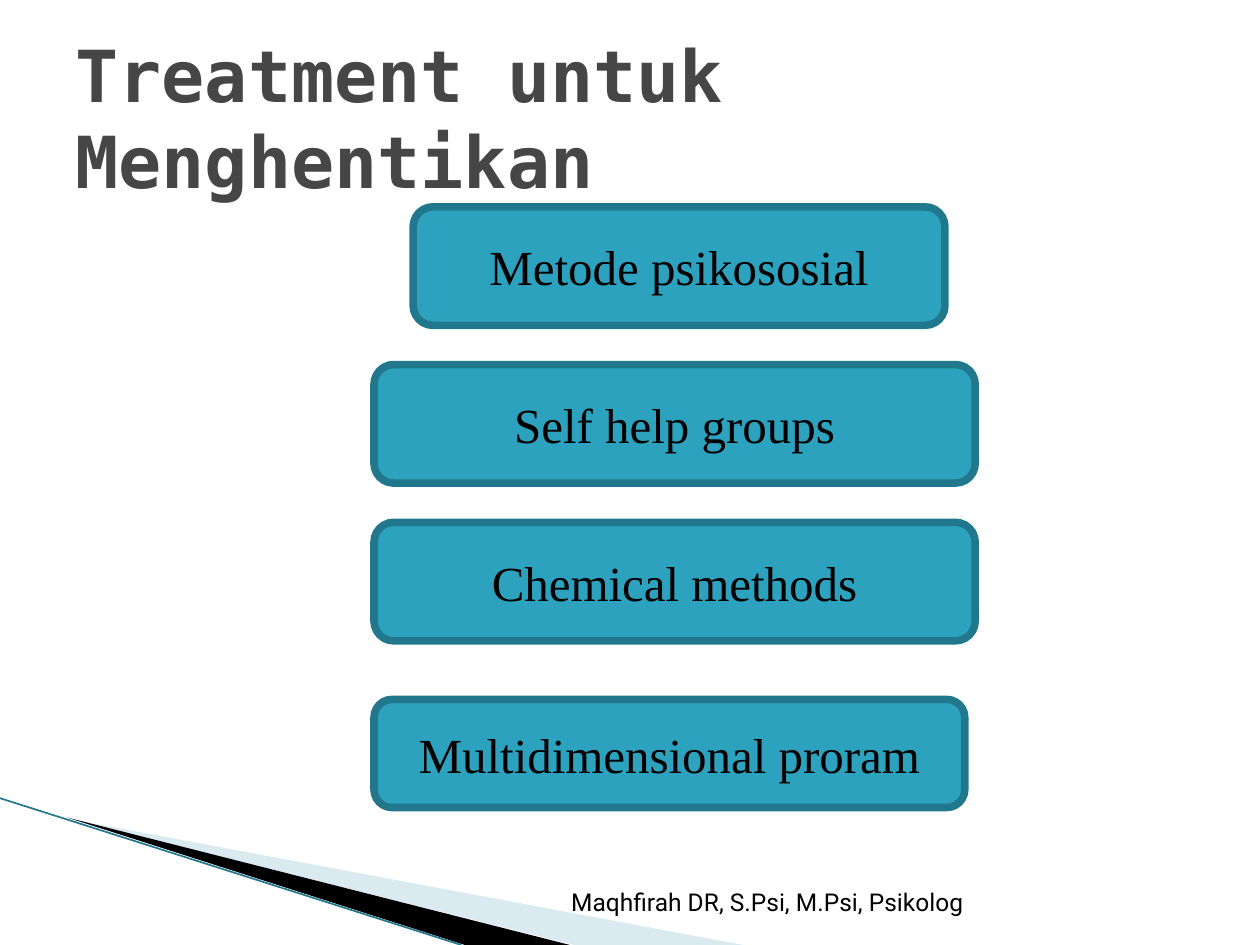
from dataclasses import dataclass

from lxml import etree
from pptx import Presentation
from pptx.dml.color import RGBColor
from pptx.enum import shapes, text
from pptx.oxml import ns
from pptx.util import Cm, Pt


@dataclass(frozen=True)
class Theme:
    title: str = "464646"
    ink: str = "000000"
    card: str = "2DA2BF"
    edge: str = "21788D"
    pale: str = "A0CBDC"
    title_font: str = "DejaVu Sans Mono"
    card_font: str = "Times New Roman"
    footer_font: str = "Roboto"
    title_size: float = 41
    card_size: float = 28
    footer_size: float = 14
    edge_width: float = 4.33
    rule_width: float = 0.95


THEME = Theme()


def rgb(value):
    return RGBColor.from_string(value)


def write(sp, content, font, size, color, bold=False,
          align=text.PP_ALIGN.LEFT, anchor=text.MSO_ANCHOR.MIDDLE):
    tf = sp.text_frame
    tf.word_wrap = True
    tf.vertical_anchor = anchor
    p = tf.paragraphs[0]
    p.alignment = align
    r = p.add_run()
    r.text = content
    r.font.name, r.font.size, r.font.bold = font, Pt(size), bold
    r.font.color.rgb = rgb(color)


def add_wedge(s, left, top, points, color, opacity=100):
    points = [(Cm(left + x), Cm(top + y)) for x, y in points]
    builder = s.shapes.build_freeform(*points[0])
    builder.add_line_segments(points[1:], close=True)
    sp = builder.convert_to_shape()
    sp.shadow.inherit = False
    sp.fill.solid()
    sp.fill.fore_color.rgb = rgb(color)
    sp.line.fill.background()
    if opacity < 100:
        clr = sp.fill._xPr.find(".//" + ns.qn("a:srgbClr"))
        etree.SubElement(clr, ns.qn("a:alpha"), val=str(opacity * 1000))


def add_corner(s, left, top, width, height):
    """Swoosh of two wedges and a thin rule in the lower left corner."""
    add_wedge(s, left, top, [(1.4, 0.42), (width, height), (11.58, height)],
              THEME.pale, opacity=40)
    add_wedge(s, left, top, [(1.35, 0.39), (11.49, height), (9.37, height)],
              THEME.ink)
    rule = s.shapes.add_connector(shapes.MSO_CONNECTOR.STRAIGHT, Cm(left),
                                  Cm(top), Cm(left + 9.3), Cm(top + height))
    rule.line.color.rgb = rgb(THEME.edge)
    rule.line.width = Pt(THEME.rule_width)
    etree.SubElement(rule._element.spPr, ns.qn("a:effectLst"))


def add_title(s, left, top, width, height, content):
    sp = s.shapes.add_textbox(Cm(left), Cm(top), Cm(width), Cm(height))
    write(sp, content, THEME.title_font, THEME.title_size, THEME.title, bold=True)


def add_card(s, left, top, width, height, content):
    sp = s.shapes.add_shape(shapes.MSO_SHAPE.ROUNDED_RECTANGLE,
                            Cm(left), Cm(top), Cm(width), Cm(height))
    sp.shadow.inherit = False
    sp.fill.solid()
    sp.fill.fore_color.rgb = rgb(THEME.card)
    sp.line.color.rgb = rgb(THEME.edge)
    sp.line.width = Pt(THEME.edge_width)
    write(sp, content, THEME.card_font, THEME.card_size, THEME.ink,
          align=text.PP_ALIGN.CENTER)


def add_methods(s, left, top):
    """Stack of treatment cards: offset x, offset y, width, height, label."""
    pitch, height = 3.18, 2.39
    cards = [
        (0.79, 0, 10.72, height, "Metode psikososial"),
        (0, pitch, 12.12, height, "Self help groups"),
        (0, 2 * pitch, 12.12, height, "Chemical methods"),
        (0, 9.93, 11.91, 2.18, "Multidimensional proram"),
    ]
    for x, y, w, h, label in cards:
        add_card(s, left + x, top + y, w, h, label)


def add_footer(s, left, top, width, height, content):
    sp = s.shapes.add_textbox(Cm(left), Cm(top), Cm(width), Cm(height))
    write(sp, content, THEME.footer_font, THEME.footer_size, THEME.ink,
          align=text.PP_ALIGN.CENTER, anchor=text.MSO_ANCHOR.TOP)


def main():
    prs = Presentation()
    prs.slide_width, prs.slide_height = Cm(25.4), Cm(19.05)
    s = prs.slides.add_slide(prs.slide_layouts[6])

    add_corner(s, 0, 16.09, 14.98, 2.96)
    add_title(s, 1.27, 0.76, 22.86, 3.18, "Treatment untuk Menghentikan")
    add_methods(s, 7.54, 4.17)
    add_footer(s, 9.12, 17.75, 12.7, 0.86, "Maqhfirah DR, S.Psi, M.Psi, Psikolog")

    prs.save("out.pptx")


if __name__ == "__main__":
    main()
